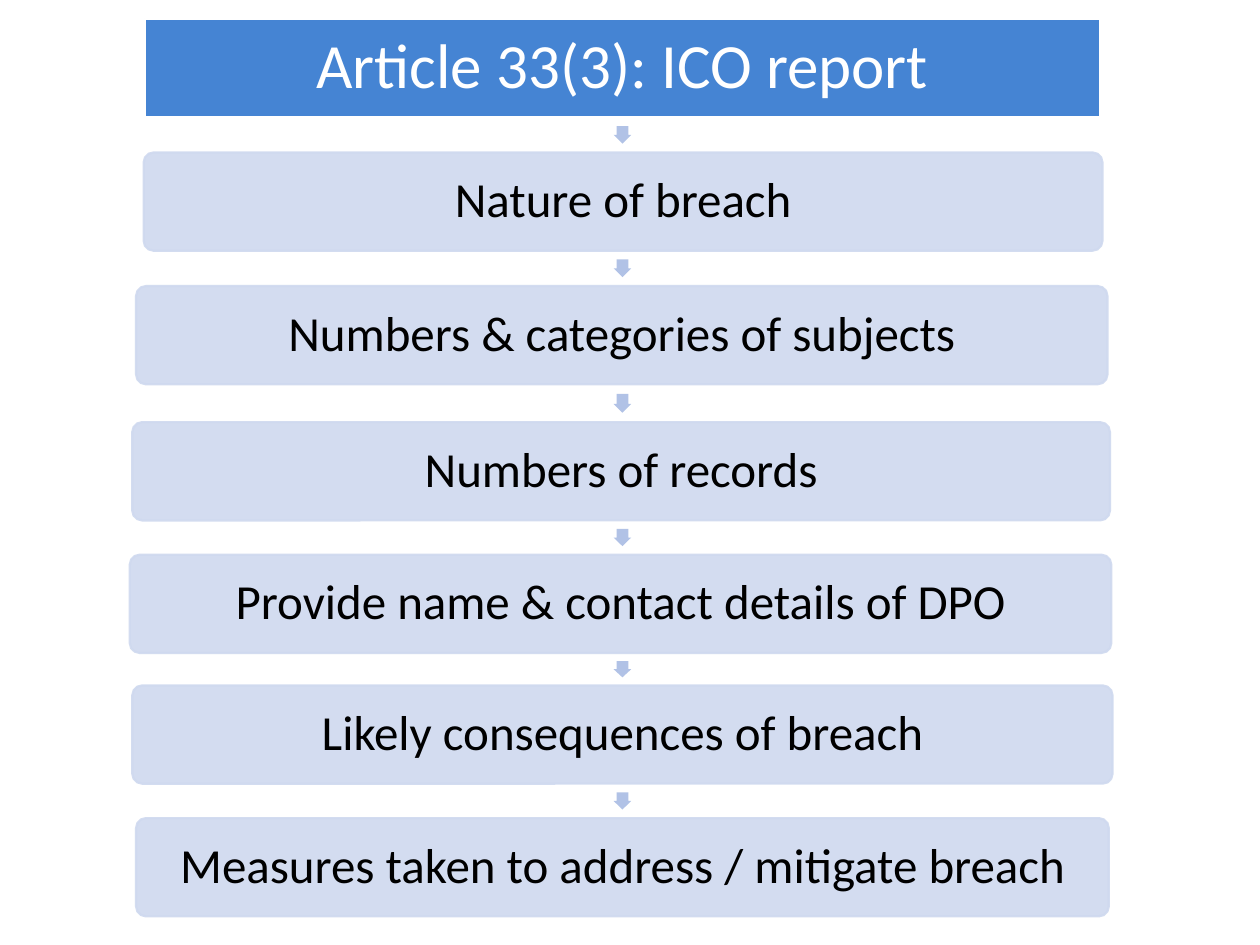
from dataclasses import dataclass

from lxml.etree import SubElement
from pptx import Presentation
from pptx.dml.color import RGBColor
from pptx.enum.shapes import MSO_SHAPE
from pptx.enum.text import MSO_ANCHOR, MSO_AUTO_SIZE, PP_ALIGN
from pptx.oxml.ns import qn
from pptx.util import Inches, Pt


@dataclass(frozen=True)
class Theme:
    font: str = "Calibri"
    heading_size: int = 36
    step_size: int = 28
    heading_fill: str = "4584D3"
    heading_ink: str = "FFFFFF"
    step_fill: str = "CFD9EF"
    step_ink: str = "000000"
    arrow_fill: str = "B1C2E6"
    step_opacity: int = 90
    border: float = 1.25
    corner: float = 0.1


THEME = Theme()
SLIDE_WIDTH, SLIDE_HEIGHT = Inches(10), Inches(7.5)
BOX_HEIGHT = SLIDE_HEIGHT * 0.104
ARROW_BREADTH = Inches(0.14)
ARROW_CENTRE = SLIDE_WIDTH * 0.494
INSET = Inches(0.06)

HEADING = ("Article 33(3): ICO report", 11.5, 2, 75.8)
STEPS = [
    ("Nature of breach", 11.4, 16.13, 76.1),
    ("Numbers & categories of subjects", 10.8, 30.27, 77.1),
    ("Numbers of records", 10.5, 44.67, 77.6),
    ("Provide name & contact details of DPO", 10.3, 58.7, 77.9),
    ("Likely consequences of breach", 10.5, 72.53, 77.8),
    ("Measures taken to address / mitigate breach", 10.8, 86.57, 77.2),
]


def box_frame(left, top, width):
    return (
        int(SLIDE_WIDTH * left / 100),
        int(SLIDE_HEIGHT * top / 100),
        int(SLIDE_WIDTH * width / 100),
        int(BOX_HEIGHT),
    )


def paint(box, fill, border):
    box.fill.solid()
    box.fill.fore_color.rgb = RGBColor.from_string(fill)
    box.line.color.rgb = RGBColor.from_string(border)
    box.line.width = Pt(THEME.border)


def soften(box, opacity):
    for colour in box.element.spPr.iter(qn("a:srgbClr")):
        SubElement(colour, qn("a:alpha"), val=str(opacity * 1000))


def write(box, wording, size, ink):
    frame = box.text_frame
    frame.text = wording
    frame.word_wrap = True
    frame.auto_size = MSO_AUTO_SIZE.NONE
    frame.vertical_anchor = MSO_ANCHOR.MIDDLE
    frame.margin_left = frame.margin_right = INSET
    frame.margin_top = frame.margin_bottom = INSET
    paragraph = frame.paragraphs[0]
    paragraph.alignment = PP_ALIGN.CENTER
    paragraph.line_spacing = 0.9
    font = paragraph.runs[0].font
    font.name = THEME.font
    font.size = Pt(size)
    font.color.rgb = RGBColor.from_string(ink)


def format_heading(heading, wording, left, top, width):
    heading.left, heading.top, heading.width, heading.height = box_frame(left, top, width)
    outline = SubElement(heading.element.spPr, qn("a:prstGeom"), prst="roundRect")
    guides = SubElement(outline, qn("a:avLst"))
    SubElement(guides, qn("a:gd"), name="adj", fmla=f"val {int(THEME.corner * 100000)}")
    paint(heading, THEME.heading_fill, THEME.heading_ink)
    write(heading, wording, THEME.heading_size, THEME.heading_ink)


def add_step(slide, wording, left, top, width):
    step = slide.shapes.add_shape(MSO_SHAPE.ROUNDED_RECTANGLE, *box_frame(left, top, width))
    step.shadow.inherit = False
    step.adjustments[0] = THEME.corner
    paint(step, THEME.step_fill, THEME.step_fill)
    soften(step, THEME.step_opacity)
    write(step, wording, THEME.step_size, THEME.step_ink)
    return step


def add_arrow(slide, upper, lower):
    gap_top = upper.top + upper.height
    length = (lower.top - gap_top) / 2
    middle = (gap_top + lower.top) / 2
    arrow = slide.shapes.add_shape(
        MSO_SHAPE.RIGHT_ARROW,
        int(ARROW_CENTRE - length / 2),
        int(middle - ARROW_BREADTH / 2),
        int(length),
        ARROW_BREADTH,
    )
    arrow.rotation = 90
    arrow.adjustments[0] = 0.67
    arrow.adjustments[1] = 0.5
    arrow.shadow.inherit = False
    arrow.fill.solid()
    arrow.fill.fore_color.rgb = RGBColor.from_string(THEME.arrow_fill)
    arrow.line.fill.background()


def main():
    presentation = Presentation()
    presentation.slide_width, presentation.slide_height = SLIDE_WIDTH, SLIDE_HEIGHT
    slide = presentation.slides.add_slide(presentation.slide_layouts[5])
    previous = slide.shapes.title
    format_heading(previous, *HEADING)
    for details in STEPS:
        step = add_step(slide, *details)
        add_arrow(slide, previous, step)
        previous = step
    presentation.save("out.pptx")


if __name__ == "__main__":
    main()
